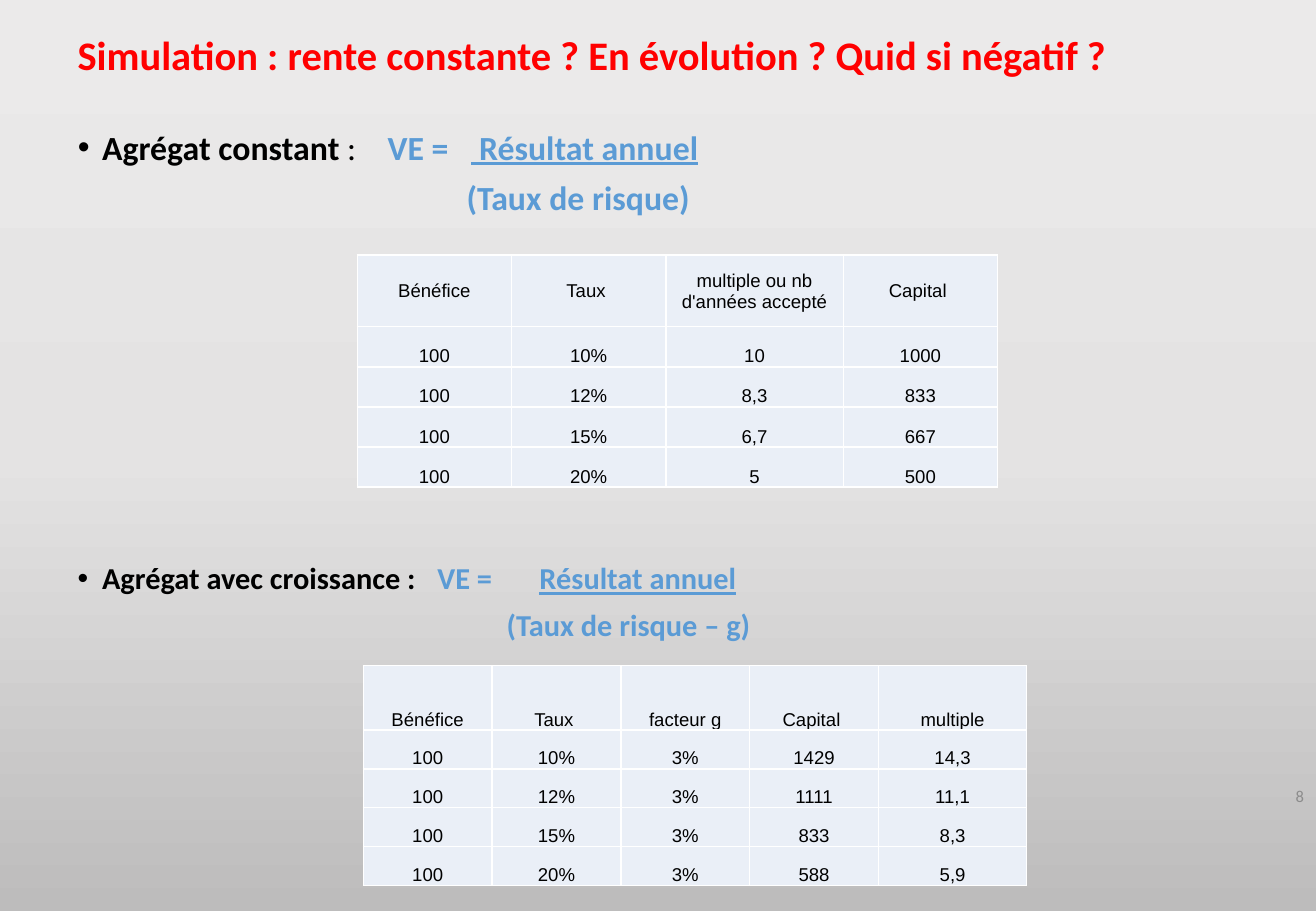
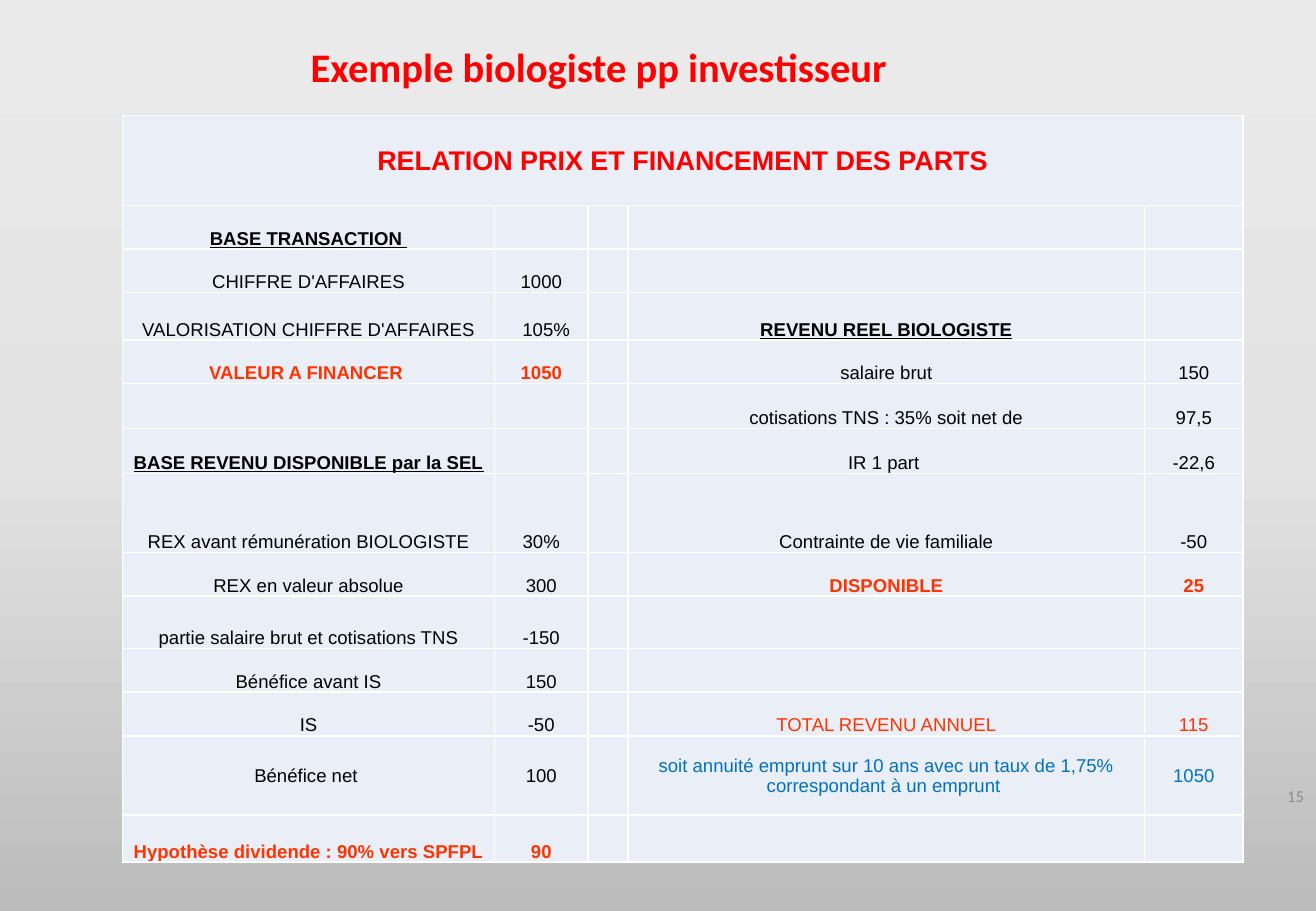
from lxml.etree import SubElement
from pptx import Presentation
from pptx.dml.color import RGBColor
from pptx.enum.text import MSO_ANCHOR, PP_ALIGN
from pptx.oxml.ns import qn
from pptx.util import Inches, Pt

BLACK, RED, BLUE, GREY = "000000", "FF0000", "5B9BD5", "8C8C8C"
CELL, BORDER = "EAEFF7", "FFFFFF"
BACKDROP = [(0, "EBEAEA"), (50, "E4E3E3"), (100, "BDBCBC")]
HEAD, BODY = "Calibri", "Arial"

STYLES = {
    "plain": {},
    "banner": dict(size=16, color=RED, bold=True),
    "heading": dict(bold=True, underline=True),
    "key": dict(color="FF3300", bold=True),
    "total": dict(color="FF3300"),
    "loan": dict(color="0070C0"),
}

# Tops and lefts in inches; "shift" indents the numerator.
FORMULAS = [
    dict(label=[("Agrégat constant ", True), (":", False)], size=20, top=1.08,
         equals_left=3.19, fraction_left=3.84, shift=0.04,
         numerator=" Résultat annuel", denominator="(Taux de risque)"),
    dict(label=[("Agrégat avec croissance :", True)], size=18, top=4.64,
         equals_left=3.6, fraction_left=4.17, shift=0.27,
         numerator="Résultat annuel", denominator="(Taux de risque – g)"),
]

CONSTANT = dict(
    at=(2.94, 2.1), cols=[1.27, 1.27, 1.46, 1.27], heights=[0.59] + [0.33] * 4,
    middle_rows={0},
    rows=[
        ["Bénéfice", "Taux ", "multiple ou nb d'années accepté", "Capital "],
        ["100", "10%", "10", "1000"],
        ["100", "12%", "8,3", "833"],
        ["100", "15%", "6,7", "667"],
        ["100", "20%", "5", "500"],
    ])

GROWTH = dict(
    at=(2.99, 5.48), cols=[1.06] * 4 + [1.22], heights=[0.53] + [0.32] * 4,
    middle_rows=set(),
    rows=[
        ["Bénéfice", "Taux ", "facteur g", "Capital ", "multiple"],
        ["100", "10%", "3%", "1429", "14,3"],
        ["100", "12%", "3%", "1111", "11,1"],
        ["100", "15%", "3%", "833", "8,3"],
        ["100", "20%", "3%", "588", "5,9"],
    ])

FINANCING = dict(
    at=(1.01, 0.95), cols=[3.06, 0.77, 0.33, 4.25, 0.81],
    heights=[0.74, 0.36, 0.36, 0.39, 0.36, 0.37, 0.37, 0.65, 0.36, 0.43,
             0.36, 0.36, 0.65, 0.39],
    middle_rows={0, 12}, merge_first=True,
    rows=[
        [("RELATION PRIX ET FINANCEMENT DES PARTS", "banner"), "", "", "", ""],
        [("BASE TRANSACTION ", "heading"), "", "", "", ""],
        ["CHIFFRE D'AFFAIRES", "1000", "", "", ""],
        ["VALORISATION CHIFFRE D'AFFAIRES", "105%", "",
         ("REVENU REEL BIOLOGISTE", "heading"), ""],
        [("VALEUR A FINANCER ", "key"), ("1050", "key"), "", "salaire brut", "150"],
        ["", "", "", "cotisations TNS : 35% soit net de", "97,5"],
        [("BASE REVENU DISPONIBLE par la SEL", "heading"), "", "",
         "IR 1 part ", "-22,6"],
        ["REX avant rémunération BIOLOGISTE", "30%", "",
         "Contrainte de vie familiale", "-50"],
        ["REX en valeur absolue", "300", "", ("DISPONIBLE", "key"), ("25", "key")],
        ["partie salaire brut et cotisations TNS", "-150", "", "", ""],
        ["Bénéfice avant IS", "150", "", "", ""],
        ["IS", "-50", "", ("TOTAL REVENU ANNUEL", "total"), ("115", "total")],
        ["Bénéfice net ", "100", "",
         ("soit annuité emprunt sur 10 ans avec un taux de 1,75% "
          "correspondant à un emprunt ", "loan"), ("1050", "loan")],
        [("Hypothèse dividende : 90% vers SPFPL", "key"), ("90", "key"), "", "", ""],
    ])


def rgb(value):
    return RGBColor.from_string(value)


def add_run(p, text, size=11, color=BLACK, bold=False, underline=False, font=BODY):
    r = p.add_run()
    r.text = text
    f = r.font
    f.name, f.size, f.bold, f.underline = font, Pt(size), bold, underline
    f.color.rgb = rgb(color)


def add_box(slide, left, top, width, height, anchor=MSO_ANCHOR.MIDDLE, inset=0.1):
    sp = slide.shapes.add_textbox(*map(Inches, (left, top, width, height)))
    tf = sp.text_frame
    tf.word_wrap = True
    tf.vertical_anchor = anchor
    tf.margin_left = tf.margin_right = Inches(inset)
    tf.margin_top = tf.margin_bottom = Inches(inset / 2)
    return tf


def add_title(slide, text, box, align=PP_ALIGN.LEFT):
    p = add_box(slide, *box).paragraphs[0]
    p.alignment = align
    p.line_spacing = 0.9
    add_run(p, text, 24, RED, True, font=HEAD)


def add_page_number(slide, number):
    p = add_box(slide, 10.11, 6.27, 0.72, 0.57).paragraphs[0]
    p.alignment = PP_ALIGN.RIGHT
    add_run(p, number, 9.8, GREY, font=HEAD)


def add_formula(slide, label, size, top, equals_left, fraction_left, shift,
                numerator, denominator):
    """Bulleted label, then 'VE =' and a two-line fraction."""
    def body_box(left, width, height=0.35):
        tf = add_box(slide, left, top, width, height, MSO_ANCHOR.TOP, 0)
        tf.paragraphs[0].line_spacing = 0.9
        return tf

    p = body_box(0.64, equals_left - 0.7).paragraphs[0]
    pPr = p._p.get_or_add_pPr()
    pPr.set("marL", str(Inches(0.2)))
    pPr.set("indent", str(-Inches(0.2)))
    SubElement(pPr, qn("a:buFont"), typeface=BODY)
    SubElement(pPr, qn("a:buChar"), char="•")
    for text, bold in label:
        add_run(p, text, size, BLACK, bold, font=HEAD)

    p = body_box(equals_left, 0.6).paragraphs[0]
    add_run(p, "VE =", size, BLUE, True, font=HEAD)

    tf = body_box(fraction_left, 2.6, 0.75)
    p = tf.paragraphs[0]
    p._p.get_or_add_pPr().set("marL", str(Inches(shift)))
    add_run(p, numerator, size, BLUE, True, True, HEAD)
    p = tf.add_paragraph()
    p.line_spacing = 0.9
    p.space_before = Pt(8.1)
    add_run(p, denominator, size, BLUE, True, font=HEAD)


def style_cell(cell, anchor):
    cell.vertical_anchor = anchor
    cell.margin_left = cell.margin_right = cell.margin_top = Inches(0.01)
    cell.margin_bottom = 0
    tcPr = cell._tc.get_or_add_tcPr()
    for side in ("a:lnL", "a:lnR", "a:lnT", "a:lnB"):
        ln = SubElement(tcPr, qn(side), w=str(Pt(1)))
        SubElement(SubElement(ln, qn("a:solidFill")), qn("a:srgbClr"), val=BORDER)
    cell.fill.solid()
    cell.fill.fore_color.rgb = rgb(CELL)


def add_grid(slide, at, cols, heights, middle_rows, rows, merge_first=False):
    size = sum(cols), sum(heights)
    frame = slide.shapes.add_table(len(rows), len(cols), *map(Inches, at + size))
    table = frame.table
    table.first_row = table.horz_banding = False
    for column, width in zip(table.columns, cols):
        column.width = Inches(width)
    for i, (row, height) in enumerate(zip(rows, heights)):
        table.rows[i].height = Inches(height)
        anchor = MSO_ANCHOR.MIDDLE if i in middle_rows else MSO_ANCHOR.BOTTOM
        for j, item in enumerate(row):
            text, style = (item, "plain") if isinstance(item, str) else item
            cell = table.cell(i, j)
            style_cell(cell, anchor)
            if text:
                p = cell.text_frame.paragraphs[0]
                p.alignment = PP_ALIGN.CENTER
                add_run(p, text, **STYLES[style])
    if merge_first:
        table.cell(0, 0).merge(table.cell(0, len(cols) - 1))
    return table


def set_backdrop(master):
    fill = master.background.fill
    fill.gradient()
    fill.gradient_angle = 270
    stops = master.element.find(".//" + qn("a:gsLst"))
    for stop in list(stops):
        stops.remove(stop)
    for position, color in BACKDROP:
        stop = SubElement(stops, qn("a:gs"), pos=str(position * 1000))
        SubElement(stop, qn("a:srgbClr"), val=color)


def build_simulation(slide):
    add_title(slide, "Simulation : rente constante ? En évolution ? Quid si négatif ?",
              (0.54, 0.13, 9.81, 0.69))
    for formula in FORMULAS:
        add_formula(slide, **formula)
    add_page_number(slide, "8")
    add_grid(slide, **CONSTANT)
    add_grid(slide, **GROWTH)


def build_example(slide):
    add_title(slide, "Exemple biologiste pp investisseur ",
              (0.54, 0.3, 8.85, 0.54), PP_ALIGN.CENTER)
    table = add_grid(slide, **FINANCING)
    table.cell(3, 1).margin_left = Inches(0.09)
    add_page_number(slide, "15")


def main():
    prs = Presentation()
    prs.slide_width, prs.slide_height = Inches(10.83), Inches(7.5)
    set_backdrop(prs.slide_master)
    for build in (build_simulation, build_example):
        build(prs.slides.add_slide(prs.slide_layouts[6]))
    prs.save("out.pptx")


if __name__ == "__main__":
    main()
